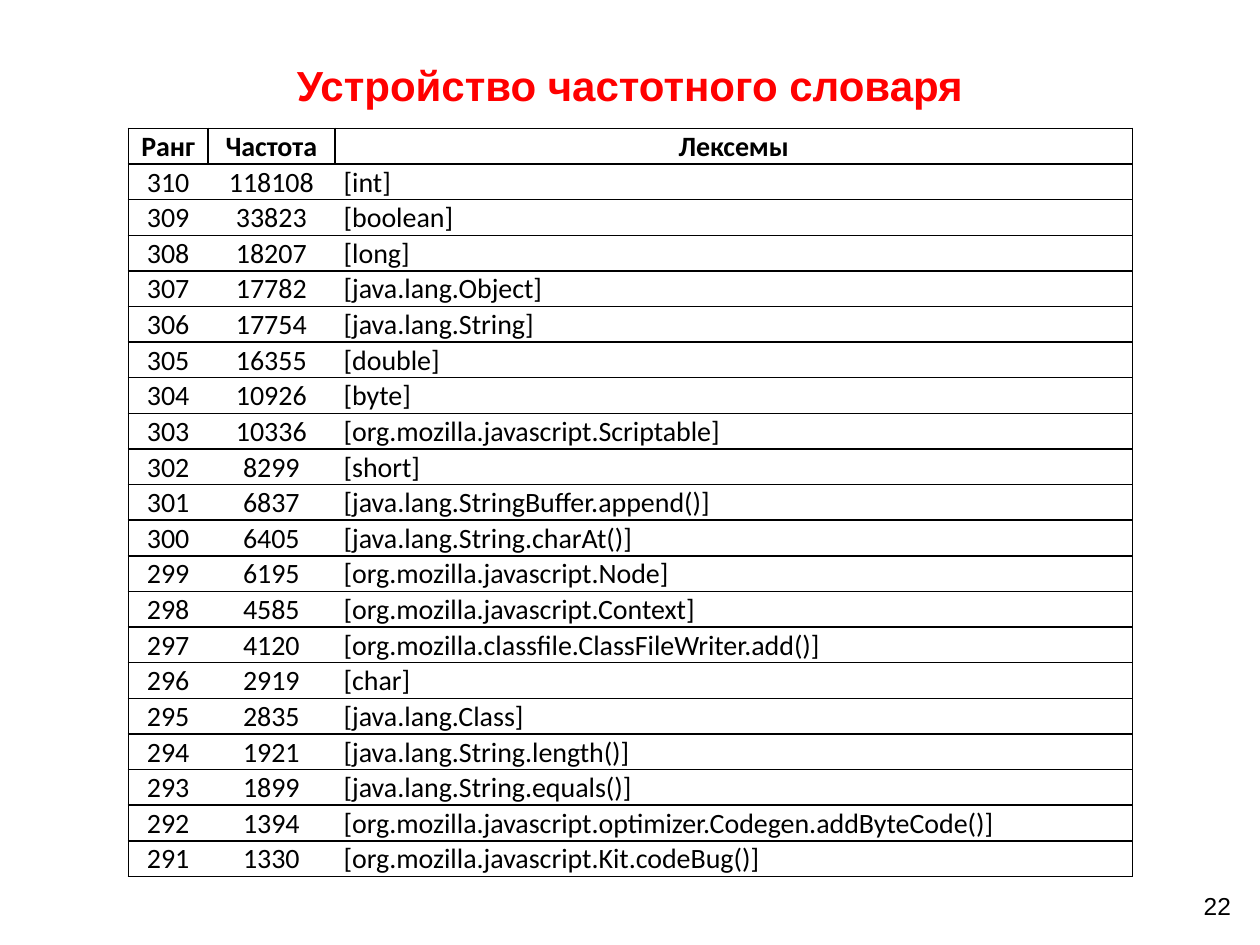
"""Build a slide with a frequency dictionary table."""
from lxml.etree import SubElement
from pptx import Presentation
from pptx.dml.color import RGBColor
from pptx.enum.text import MSO_ANCHOR as ANCHOR, PP_ALIGN as ALIGN
from pptx.oxml.ns import qn
from pptx.util import Pt

BLACK = RGBColor(0, 0, 0)
RED = RGBColor(255, 0, 0)

HEADER = ("Ранг", "Частота", "Лексемы")
TOP_RANK = 310
LEXEMES = [
    (118108, "int"),
    (33823, "boolean"),
    (18207, "long"),
    (17782, "java.lang.Object"),
    (17754, "java.lang.String"),
    (16355, "double"),
    (10926, "byte"),
    (10336, "org.mozilla.javascript.Scriptable"),
    (8299, "short"),
    (6837, "java.lang.StringBuffer.append()"),
    (6405, "java.lang.String.charAt()"),
    (6195, "org.mozilla.javascript.Node"),
    (4585, "org.mozilla.javascript.Context"),
    (4120, "org.mozilla.classfile.ClassFileWriter.add()"),
    (2919, "char"),
    (2835, "java.lang.Class"),
    (1921, "java.lang.String.length()"),
    (1899, "java.lang.String.equals()"),
    (1394, "org.mozilla.javascript.optimizer.Codegen.addByteCode()"),
    (1330, "org.mozilla.javascript.Kit.codeBug()"),
]


class SlideBuilder:
    """Hold the style and the current slide."""

    title_font = dict(name="Arial", size=Pt(24), bold=True)
    number_font = dict(name="Arial", size=Pt(14), bold=False)
    cell_font = dict(name="Calibri", size=Pt(16))
    cell_format = dict(margin_left=Pt(5), margin_right=Pt(5), margin_top=0,
                       margin_bottom=0, vertical_anchor=ANCHOR.BOTTOM)
    border = Pt(1)

    def __init__(self, prs):
        self.s = prs.slides.add_slide(prs.slide_layouts[6])

    def add_words(self, tf, text, align, color, font):
        p = tf.paragraphs[0]
        p.alignment = align
        r = p.add_run()
        r.text = text
        for key, value in font.items():
            setattr(r.font, key, value)
        r.font.color.rgb = color

    def text(self, box, text, align, anchor, color, font):
        tf = self.s.shapes.add_textbox(*map(Pt, box)).text_frame
        tf.word_wrap = True
        tf.vertical_anchor = anchor
        self.add_words(tf, text, align, color, font)

    def borders(self, cell, sides):
        tc_pr = cell._tc.get_or_add_tcPr()
        for side in "LRTB":
            ln = SubElement(tc_pr, qn(f"a:ln{side}"), w=str(self.border))
            if side in sides:
                fill = SubElement(ln, qn("a:solidFill"))
                SubElement(fill, qn("a:srgbClr"), val=str(BLACK))
            else:
                SubElement(ln, qn("a:noFill"))

    def table(self, left, top, widths, row_height, rows):
        shape = self.s.shapes.add_table(
            len(rows), len(widths), Pt(left), Pt(top),
            Pt(sum(widths)), Pt(row_height * len(rows)))
        table = shape.table
        table.first_row = table.horz_banding = False
        for column, width in zip(table.columns, widths):
            column.width = Pt(width)
        last = len(widths) - 1
        for i, values in enumerate(rows):
            table.rows[i].height = Pt(row_height)
            header = i == 0
            for j, value in enumerate(values):
                cell = table.cell(i, j)
                for key, setting in self.cell_format.items():
                    setattr(cell, key, setting)
                left_side = "L" if header or j == 0 else ""
                right_side = "R" if header or j == last else ""
                self.borders(cell, "TB" + left_side + right_side)
                cell.fill.background()
                align = ALIGN.CENTER if header or j < last else ALIGN.LEFT
                self.add_words(cell.text_frame, str(value), align, BLACK,
                               dict(self.cell_font, bold=header))


def main():
    prs = Presentation()
    prs.slide_width, prs.slide_height = Pt(720), Pt(540)
    slide = SlideBuilder(prs)
    slide.text((516, 505.5, 194.5, 24), "22", ALIGN.RIGHT, ANCHOR.TOP,
               BLACK, slide.number_font)
    slide.text((0, 11.5, 720, 73.5), "Устройство частотного словаря",
               ALIGN.CENTER, ANCHOR.MIDDLE, RED, slide.title_font)
    rows = [HEADER] + [(TOP_RANK - i, count, f"[{name}]")
                       for i, (count, name) in enumerate(LEXEMES)]
    slide.table(73.4, 73.4, (45.4, 72.6, 455.8), 20.37, rows)
    prs.save("out.pptx")


if __name__ == "__main__":
    main()
